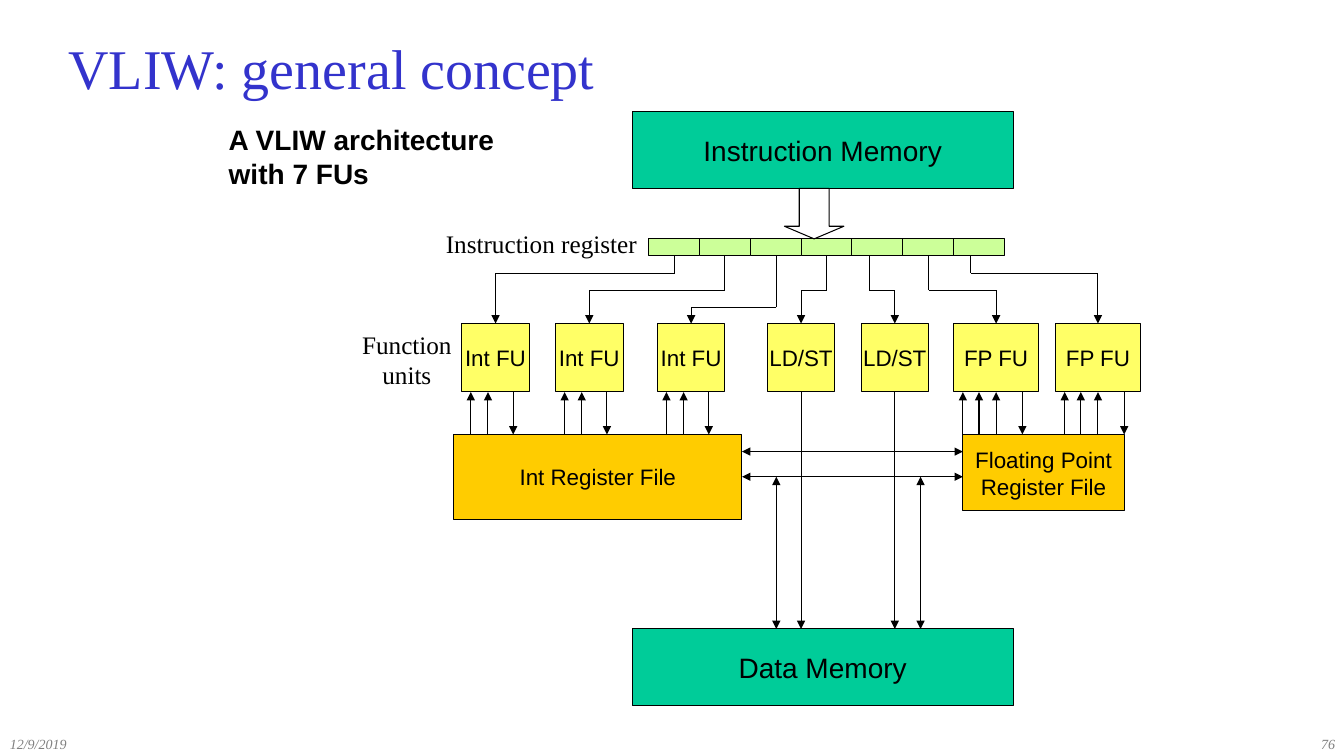
from dataclasses import dataclass

from lxml.etree import SubElement
from pptx import Presentation
from pptx.dml.color import RGBColor
from pptx.enum.shapes import MSO_CONNECTOR, MSO_SHAPE
from pptx.enum.text import MSO_ANCHOR, PP_ALIGN
from pptx.oxml.ns import qn
from pptx.util import Inches, Pt


@dataclass(frozen=True)
class Theme:
    ink: str = "000000"
    title: str = "3333CC"
    footer: str = "808080"
    memory: str = "00CC99"
    registers: str = "FFCC00"
    unit: str = "FFFF66"
    slot: str = "CCFF99"
    serif: str = "Times New Roman"
    sans: str = "Arial"
    title_size: int = 40
    large: int = 20
    label: int = 18
    normal: int = 16
    small: int = 10
    line: float = 0.75


theme = Theme()


def write(shape, text, size, font, color=theme.ink, align=PP_ALIGN.CENTER,
          anchor=MSO_ANCHOR.MIDDLE, wrap=False, bold=False, italic=False):
    frame = shape.text_frame
    frame.text = text
    frame.word_wrap = wrap
    frame.vertical_anchor = anchor
    for para in frame.paragraphs:
        para.alignment = align
        para.font.name = font
        para.font.size = Pt(size)
        para.font.bold = bold
        para.font.italic = italic
        para.font.color.rgb = RGBColor.from_string(color)


def connect(x1, y1, x2, y2, ends=("tailEnd",)):
    wire = page.shapes.add_connector(
        MSO_CONNECTOR.STRAIGHT, Inches(x1), Inches(y1), Inches(x2), Inches(y2))
    wire.line.color.rgb = RGBColor.from_string(theme.ink)
    wire.line.width = Pt(theme.line)
    outline = wire.line._get_or_add_ln()
    for end in ends:
        SubElement(outline, qn(f"a:{end}"), type="triangle")
    SubElement(wire._element.spPr, qn("a:effectLst"))


deck = Presentation()
deck.slide_width, deck.slide_height = Inches(13.33), Inches(7.5)
page = deck.slides.add_slide(deck.slide_layouts[5])

# Title
title = page.shapes.title
title.left, title.top = Inches(0.58), Inches(0.25)
title.width, title.height = Inches(12.44), Inches(0.83)
write(title, "VLIW: general concept", theme.title_size, theme.serif,
      theme.title, PP_ALIGN.LEFT, wrap=True)

# Caption, labels and footer
caption_style = dict(size=theme.large, font=theme.sans, bold=True,
                     align=PP_ALIGN.LEFT, wrap=True)
label_style = dict(size=theme.label, font=theme.serif)
footer_style = dict(size=theme.small, font=theme.serif, color=theme.footer,
                    italic=True, wrap=True)
texts = [
    ("A VLIW architecture with 7 FUs", 2.17, 1.17, 2.92, 0.77, caption_style),
    ("Instruction register", 4.32, 2.22, 2.1, 0.4, label_style),
    ("Function\nunits", 3.49, 3.22, 1.09, 0.7, label_style),
    ("12/9/2019", 0, 7.25, 1.78, 0.25, footer_style | {"align": PP_ALIGN.LEFT}),
    ("76", 10.56, 7.25, 2.78, 0.25, footer_style | {"align": PP_ALIGN.RIGHT}),
]
for text, left, top, width, height, style in texts:
    box = page.shapes.add_textbox(
        Inches(left), Inches(top), Inches(width), Inches(height))
    write(box, text, anchor=MSO_ANCHOR.TOP, **style)

# Function units: name, left, width, slot exit, wire bend, inputs, output
int_inputs, fp_inputs = (0.09, 0.26), (0.09, 0.25, 0.42)
units = [
    ("Int FU", 4.58, 0.67, 6.69, 2.71, int_inputs, 0.51),
    ("Int FU", 5.51, 0.67, 7.19, 2.88, int_inputs, 0.51),
    ("Int FU", 6.52, 0.67, 7.7, 3.05, int_inputs, 0.51),
    ("LD/ST", 7.61, 0.67, 8.2, 2.88, (), None),
    ("LD/ST", 8.54, 0.67, 8.62, 2.88, (), None),
    ("FP FU", 9.46, 0.84, 9.21, 2.88, fp_inputs, 0.68),
    ("FP FU", 10.47, 0.84, 9.63, 2.71, fp_inputs, 0.68),
]
slot_top, slot_bottom, slot_pitch = 2.37, 2.54, 0.505
unit_top, unit_bottom = 3.21, 3.89
file_top, data_top = 4.31, 6.24

# Memories, register files, register slots and unit boxes
boxes = [
    ("Instruction Memory", 6.27, 1.11, 3.78, 0.76, theme.memory, theme.large),
    ("Data Memory", 6.27, data_top, 3.78, 0.76, theme.memory, theme.large),
    ("Int Register File", 4.5, file_top, 2.86, 0.84, theme.registers, theme.normal),
    ("Floating Point\nRegister File", 9.55, file_top, 1.6, 0.76,
     theme.registers, theme.normal),
]
for index, (name, left, width, *_) in enumerate(units):
    boxes.append((name, left, unit_top, width, 0.67, theme.unit, theme.normal))
    boxes.append(("", 6.43 + index * slot_pitch, slot_top, slot_pitch, 0.17,
                  theme.slot, theme.normal))
for text, left, top, width, height, fill, size in boxes:
    box = page.shapes.add_shape(MSO_SHAPE.RECTANGLE, Inches(left), Inches(top),
                                Inches(width), Inches(height))
    box.shadow.inherit = False
    box.fill.solid()
    box.fill.fore_color.rgb = RGBColor.from_string(fill)
    box.line.color.rgb = RGBColor.from_string(theme.ink)
    box.line.width = Pt(theme.line)
    if text:
        write(box, text, size, theme.sans)

# Fetch arrow from memory to the instruction register
fetch = page.shapes.add_shape(MSO_SHAPE.DOWN_ARROW, Inches(7.78), Inches(1.87),
                              Inches(0.59), Inches(0.5))
fetch.adjustments[0], fetch.adjustments[1] = 0.5, 0.25
fetch.shadow.inherit = False
fetch.fill.background()
fetch.line.color.rgb = RGBColor.from_string(theme.ink)
fetch.line.width = Pt(theme.line)

# Wires around each function unit
for name, left, width, slot_x, bend, inputs, output in units:
    center = left + width / 2
    connect(slot_x, slot_bottom, slot_x, bend, ends=())
    connect(slot_x, bend, center, bend, ends=())
    connect(center, bend, center, unit_top)
    for offset in inputs:
        connect(left + offset, file_top, left + offset, unit_bottom)
    if output:
        connect(left + output, unit_bottom, left + output, file_top)
    else:
        connect(center, unit_bottom, center, data_top)

# Two-way buses between register files and data memory
both = ("headEnd", "tailEnd")
for bus_y in (4.48, 4.73):
    connect(7.36, bus_y, 9.55, bus_y, both)
for bus_x in (7.7, 9.13):
    connect(bus_x, 4.73, bus_x, data_top, both)

deck.save("out.pptx")
